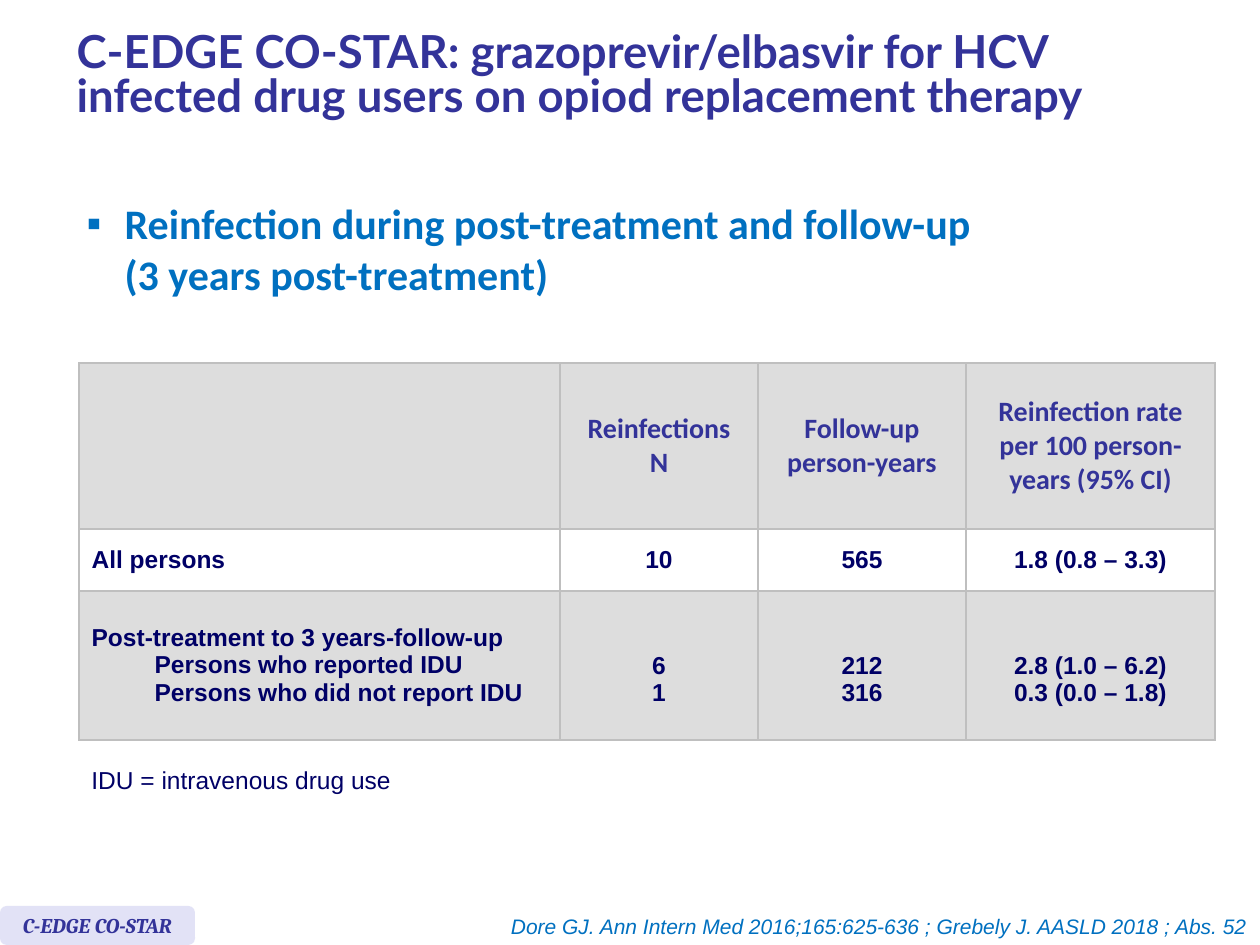
from dataclasses import dataclass

from lxml.etree import SubElement as Sub
from pptx import Presentation
from pptx.dml.color import RGBColor as Rgb
from pptx.enum.shapes import MSO_SHAPE as Kind
from pptx.enum.text import MSO_ANCHOR as Anchor, MSO_AUTO_SIZE as Auto, PP_ALIGN as Align
from pptx.oxml.ns import qn
from pptx.util import Emu, Pt


@dataclass(frozen=True)
class Face:
    name: str
    size: int
    color: str
    bold: bool = False
    slant: bool = False


class Theme:
    title = Face("Lato", 26, "333399", bold=True)
    lead = Face("Calibri", 24, "0070C0", bold=True)
    head = Face("Calibri", 16, "333399", bold=True)
    cell = Face("Arial", 14, "000066", bold=True)
    note = Face("Arial", 14, "000066")
    tag = Face("Cambria", 12, "333399", bold=True, slant=True)
    cite = Face("Arial", 12, "0070C0", slant=True)
    grey, white, rule, pale = "DDDDDD", "FFFFFF", "BFBFBF", "E2E2F6"


def px(n):
    return Emu(round(n * 914400 / 126))


def place(shape, box):
    shape.left, shape.top, shape.width, shape.height = map(px, box)


def add_run(para, text, face):
    run = para.add_run()
    run.text = text
    font = run.font
    font.name, font.size = face.name, Pt(face.size)
    font.bold, font.italic = face.bold, face.slant
    font.color.rgb = Rgb.from_string(face.color)


def add_lines(frame, lines, face, align):
    for i, line in enumerate(lines):
        para = frame.add_paragraph() if i else frame.paragraphs[0]
        para.alignment = align
        add_run(para, line, face)


def paint(part, color):
    part.fill.solid()
    part.fill.fore_color.rgb = Rgb.from_string(color)


# Title
def add_title(slide, box):
    title = slide.shapes.title
    place(title, box)
    frame = title.text_frame
    frame.auto_size = Auto.NONE
    frame.vertical_anchor = Anchor.MIDDLE
    add_lines(frame, ["C-EDGE CO-STAR: grazoprevir/elbasvir for HCV "
                      "infected drug users on opiod replacement therapy"],
              Theme.title, Align.LEFT)
    frame.paragraphs[0].line_spacing = Pt(25)


# Lead statement with a square bullet
def add_lead(slide, box):
    body = slide.placeholders[1]
    place(body, box)
    frame = body.text_frame
    frame.auto_size = Auto.NONE
    frame.margin_top = px(13)
    para = frame.paragraphs[0]
    props = para._p.get_or_add_pPr()
    props.set("marL", str(px(38)))
    props.set("indent", str(-px(38)))
    tint = Sub(props, qn("a:buClr"))
    Sub(tint, qn("a:srgbClr"), val=Theme.lead.color)
    Sub(props, qn("a:buFont"), typeface="Arial")
    Sub(props, qn("a:buChar"), char="▪")
    para.space_before = Pt(0)
    add_run(para, "Reinfection during post-treatment and follow-up", Theme.lead)
    para.add_line_break()
    add_run(para, "(3 years post-treatment)", Theme.lead)


def rule_cell(cell):
    props = cell._tc.get_or_add_tcPr()
    for side in ("lnL", "lnR", "lnT", "lnB"):
        line = Sub(props, qn("a:" + side), w=str(Pt(1)))
        fill = Sub(line, qn("a:solidFill"))
        Sub(fill, qn("a:srgbClr"), val=Theme.rule)


# Reinfection table
def add_rates(slide, box):
    rows = [
        [[], ["Reinfections", "N"], ["Follow-up", "person-years"],
         ["Reinfection rate", "per 100 person-years (95% CI)"]],
        [["All persons"], ["10"], ["565"], ["1.8 (0.8 – 3.3)"]],
        [["Post-treatment to 3 years-follow-up", "Persons who reported IDU",
          "Persons who did not report IDU"],
         ["6", "1"], ["212", "316"], ["2.8 (1.0 – 6.2)", "0.3 (0.0 – 1.8)"]],
    ]
    widths, heights = (481, 198, 208, 249), (166, 62, 149)
    table = slide.shapes.add_table(3, 4, *map(px, box)).table
    for col, wide in zip(table.columns, widths):
        col.width = px(wide)
    for row, high in zip(table.rows, heights):
        row.height = px(high)
    for r, row in enumerate(rows):
        for c, lines in enumerate(row):
            cell = table.cell(r, c)
            cell.vertical_anchor = Anchor.MIDDLE
            rule_cell(cell)
            paint(cell, Theme.white if r == 1 else Theme.grey)
            add_lines(cell.text_frame, lines, Theme.cell if r else Theme.head,
                      Align.CENTER if c else Align.LEFT)
    # Subgroups: labels step in, values start one line lower
    for para in table.cell(2, 0).text_frame.paragraphs[1:]:
        para.level = 1
        para._p.get_or_add_pPr().set("marL", str(px(63)))
    for c in range(1, 4):
        table.cell(2, c).margin_top = px(34)


# Free text on one line
def add_note(slide, box, text, face, align):
    note = slide.shapes.add_textbox(*map(px, box))
    frame = note.text_frame
    frame.word_wrap = False
    frame.auto_size = Auto.SHAPE_TO_FIT_TEXT
    add_lines(frame, [text], face, align)


# Study tag
def add_tag(slide, box):
    tag = slide.shapes.add_shape(Kind.ROUNDED_RECTANGLE, *map(px, box))
    tag.shadow.inherit = False
    paint(tag, Theme.pale)
    tag.line.fill.background()
    frame = tag.text_frame
    frame.word_wrap = False
    frame.vertical_anchor = Anchor.MIDDLE
    add_lines(frame, ["C-EDGE CO-STAR"], Theme.tag, Align.CENTER)


def main():
    deck = Presentation()
    deck.slide_width, deck.slide_height = px(1260), px(945)
    slide = deck.slides.add_slide(deck.slide_layouts[1])
    add_title(slide, (64, 10, 1150, 135))
    add_lead(slide, (74, 185, 1150, 139))
    add_tag(slide, (0, 906, 195, 39))
    add_note(slide, (493, 907, 767, 38),
             "Dore GJ. Ann Intern Med 2016;165:625-636 ; "
             "Grebely J. AASLD 2018 ; Abs. 52", Theme.cite, Align.RIGHT)
    add_rates(slide, (79, 363, 1136, 377))
    add_note(slide, (79, 759, 328, 43), "IDU = intravenous drug use",
             Theme.note, Align.LEFT)
    deck.save("out.pptx")


if __name__ == "__main__":
    main()
